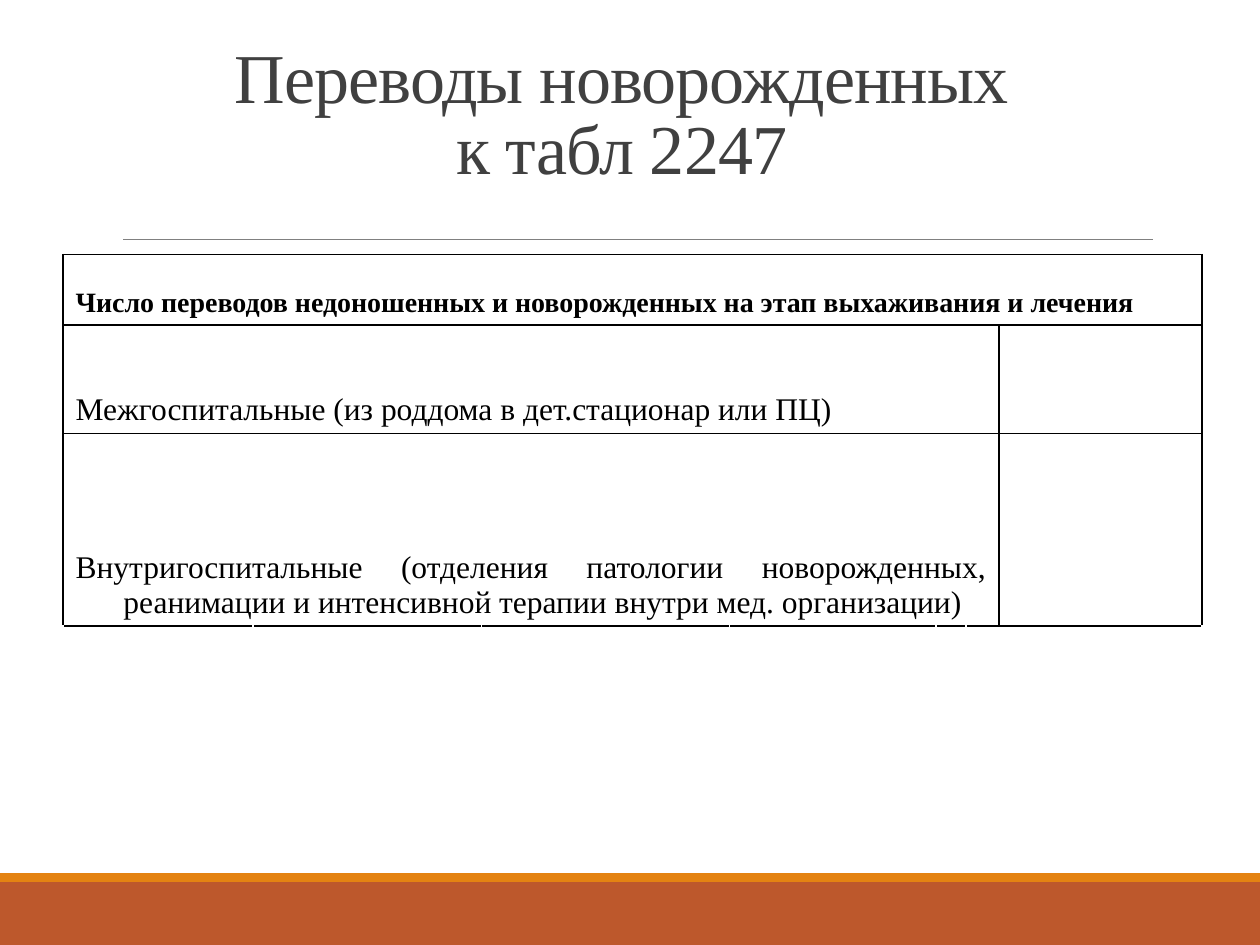
from lxml.etree import SubElement
from pptx import Presentation
from pptx.dml.color import RGBColor
from pptx.enum.shapes import MSO_CONNECTOR as Connector, MSO_SHAPE as Preset
from pptx.enum.text import MSO_ANCHOR as Anchor, PP_ALIGN as Align
from pptx.oxml.ns import qn
from pptx.util import Inches, Pt


def color(hex_value):
    return RGBColor.from_string(hex_value)


def add_text(paragraph, text, hex_value, **font_values):
    run = paragraph.add_run()
    run.text = text
    run.font.color.rgb = color(hex_value)
    for name, value in {"name": "Times New Roman", **font_values}.items():
        setattr(run.font, name, value)
    return run


presentation = Presentation()
presentation.slide_width, presentation.slide_height = Inches(10), Inches(7.5)
slide = presentation.slides.add_slide(presentation.slide_layouts[6])
shapes = slide.shapes

# Footer bands and the rule under the title
for top, height, fill in [(7, 0.5, "BD582C"), (6.93, 0.07, "E48312")]:
    band = shapes.add_shape(Preset.RECTANGLE, 0, Inches(top), presentation.slide_width, Inches(height))
    band.shadow.inherit = False
    band.fill.solid()
    band.fill.fore_color.rgb = color(fill)
    band.line.fill.background()

rule = shapes.add_connector(Connector.STRAIGHT, Inches(0.98), Inches(1.9), Inches(9.15), Inches(1.9))
rule.line.color.rgb = color("808080")
rule.line.width = Pt(0.5)
SubElement(rule._element.spPr, qn("a:effectLst"))

# Title
title = shapes.add_textbox(Inches(0.5), Inches(0.3), Inches(9), Inches(1.25)).text_frame
title.word_wrap = True
title.vertical_anchor = Anchor.BOTTOM
paragraph = title.paragraphs[0]
paragraph.alignment = Align.CENTER
paragraph.line_spacing = 0.85
title_lines = ["Переводы новорожденных ", "к табл 2247 "]
for index, line in enumerate(title_lines):
    if index:
        paragraph.add_line_break()
    run = add_text(paragraph, line, "404040", size=Pt(40))
    run._r.get_or_add_rPr().set("spc", "-50")

# Table: a heading row, two transfer rows and an unbordered row
columns = [1.51, 1.81, 1.97, 1.64, 0.23, 0.26, 1.61]
rows = [0.56, 0.86, 1.53, 0.87]
table = shapes.add_table(len(rows), len(columns), Inches(0.5), Inches(2.02),
                         Inches(sum(columns)), Inches(sum(rows))).table
table.first_row = table.horz_banding = False
for column, width in zip(table.columns, columns):
    column.width = Inches(width)
for row, height in zip(table.rows, rows):
    row.height = Inches(height)

for row, first, last in [(0, 0, 6), (1, 0, 5), (2, 0, 5), (3, 5, 6)]:
    table.cell(row, first).merge(table.cell(row, last))

last_row = len(rows) - 1
for row in range(len(rows)):
    for column in range(len(columns)):
        cell = table.cell(row, column)
        properties = cell._tc.get_or_add_tcPr()
        for side in ("L", "R", "T", "B") if row < last_row else ("T",):
            border = SubElement(properties, qn(f"a:ln{side}"), w=str(Pt(1)))
            SubElement(SubElement(border, qn("a:solidFill")), qn("a:srgbClr"), val="000000")
        cell.fill.background()

labels = [
    ("Число переводов недоношенных и новорожденных на этап выхаживания и лечения", 16, True),
    ("Межгоспитальные (из роддома в дет.стационар или ПЦ) ", 18, False),
    ("Внутригоспитальные (отделения патологии новорожденных, реанимации и "
     "интенсивной терапии внутри мед. организации)", 18, False),
]
for row, (label, size, bold) in enumerate(labels):
    cell = table.cell(row, 0)
    cell.vertical_anchor = Anchor.BOTTOM
    paragraph = cell.text_frame.paragraphs[0]
    paragraph.alignment = Align.JUSTIFY
    indent = paragraph._p.get_or_add_pPr()
    indent.set("marL", str(Inches(0.38)))
    indent.set("indent", str(-Inches(0.38)))
    add_text(paragraph, label, "000000", size=Pt(size), bold=bold)

presentation.save("out.pptx")
